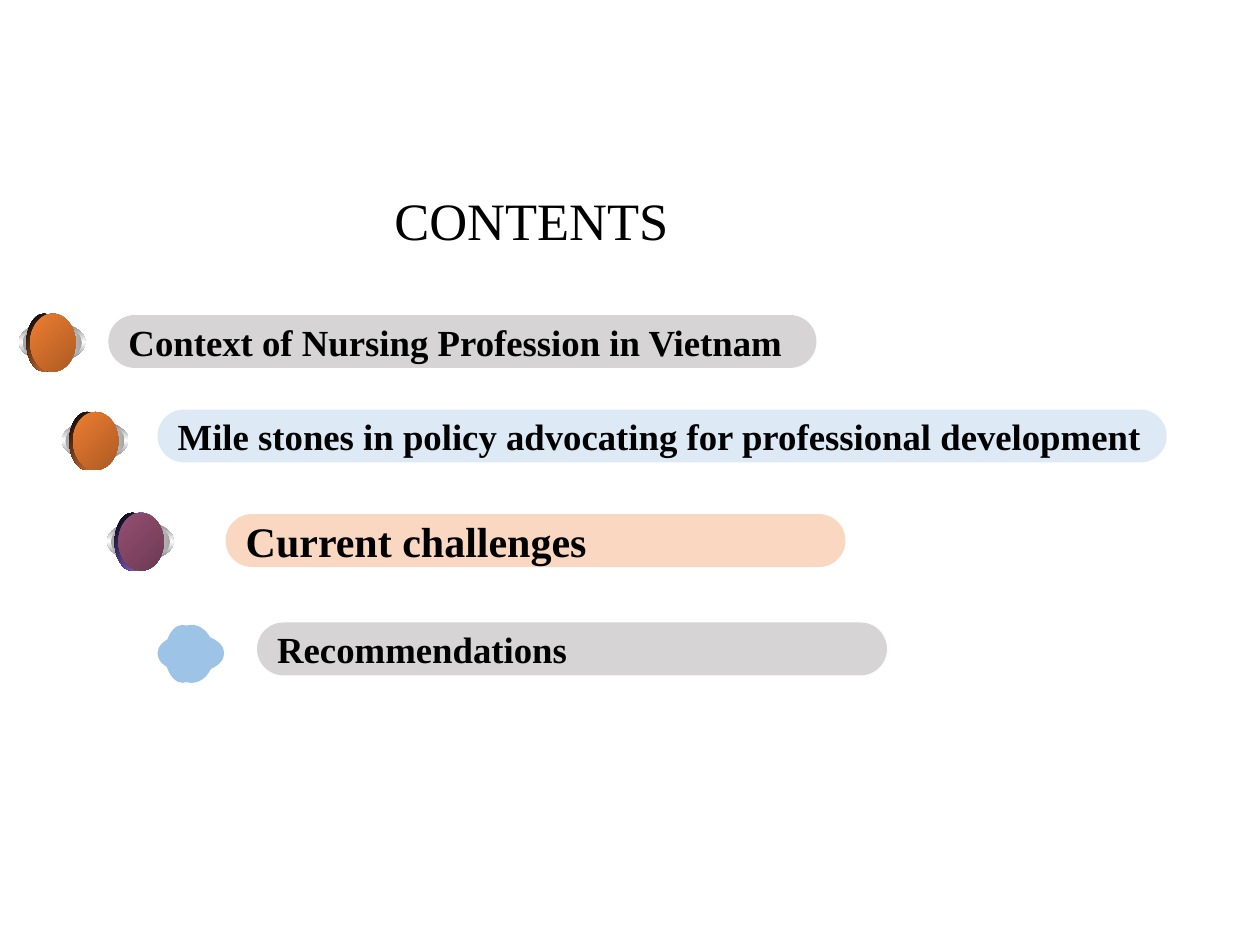
from dataclasses import dataclass

from lxml.etree import SubElement
from pptx import Presentation
from pptx.dml.color import RGBColor
from pptx.enum.shapes import MSO_SHAPE
from pptx.enum.text import MSO_ANCHOR, PP_ALIGN
from pptx.oxml.ns import qn
from pptx.util import Inches, Pt

FONT = "Times New Roman"
COLS, ROWS = 1000, 750
WIDTH, HEIGHT = Inches(10), Inches(7.5)


@dataclass(frozen=True)
class Box:
    col: int
    row: int
    cols: int
    rows: int

    def emu(self) -> tuple[int, ...]:
        cw, rh = WIDTH // COLS, HEIGHT // ROWS
        return self.col * cw, self.row * rh, self.cols * cw, self.rows * rh


@dataclass(frozen=True)
class Fill:
    colors: tuple[str, ...]
    angle: int = 0
    alpha: int = 100


@dataclass(frozen=True)
class Entry:
    text: str
    size: int
    pill: Box
    pill_color: str
    ball: tuple[int, int]
    edge: str = ""
    face: tuple[str, ...] = ()


BALL_COLOR = "9DC3E6"
OUTER_RING = Box(0, 7, 53, 31)
INNER_RING = Box(3, 9, 47, 28)
SIDE = Box(6, 0, 28, 46)
FACE = Box(9, 0, 36, 46)
ORANGE = ("ED7D31", "AD5B24")

ENTRIES = (
    Entry("Context of Nursing Profession in Vietnam", 21,
          Box(86, 250, 562, 42), "AFABAB", (15, 249), "ED7D31", ORANGE),
    Entry("Mile stones in policy advocating for professional development", 21,
          Box(125, 325, 801, 42), "BDD7EE", (49, 327), "ED7D31", ORANGE),
    Entry("Current challenges", 24,
          Box(179, 408, 492, 42), "F4B183", (85, 407), "8D67E1", ("954F72", "6D3A53")),
    Entry("Recommendations", 21,
          Box(204, 494, 500, 42), "AFABAB", (125, 496)),
)


def rgb(color: str) -> RGBColor:
    return RGBColor.from_string(color)


def paint(sp, fill: Fill) -> None:
    sp.shadow.inherit = False
    sp.line.fill.background()
    if len(fill.colors) == 1:
        sp.fill.solid()
        sp.fill.fore_color.rgb = rgb(fill.colors[0])
        if fill.alpha < 100:
            clr = sp.fill._xPr.find(qn("a:solidFill"))[0]
            SubElement(clr, qn("a:alpha"), val=str(fill.alpha * 1000))
        return
    sp.fill.gradient()
    grad = sp.fill._xPr.find(qn("a:gradFill"))
    for child in list(grad):
        grad.remove(child)
    stops = SubElement(grad, qn("a:gsLst"))
    for i, color in enumerate(fill.colors):
        pos = 100000 * i // (len(fill.colors) - 1)
        gs = SubElement(stops, qn("a:gs"), pos=str(pos))
        SubElement(gs, qn("a:srgbClr"), val=color)
    SubElement(grad, qn("a:lin"), ang=str(fill.angle * 60000), scaled="1")


def write(tf, text: str, size: int, bold: bool) -> None:
    p = tf.paragraphs[0]
    p.text = text
    p.alignment = PP_ALIGN.LEFT
    p.font.name, p.font.size, p.font.bold = FONT, Pt(size), bold
    p.font.color.rgb = rgb("000000")


def ball_layers(entry: Entry) -> list[tuple[Box, Fill]]:
    if not entry.face:
        return [(box, Fill((BALL_COLOR,))) for box in (OUTER_RING, INNER_RING, SIDE, FACE)]
    return [
        (OUTER_RING, Fill(("767676", "FFFFFF", "767676"), 90)),
        (INNER_RING, Fill(("A2A2A2", "FFFFFF", "A2A2A2"), 0)),
        (SIDE, Fill(("FFFFFF", "0563C1", "FFFFFF"), 45)),
        (SIDE, Fill(("000000", entry.edge), 45)),
        (FACE, Fill(("044C94", "0563C1", "044C94"), 315)),
        (FACE, Fill(entry.face, 45)),
    ]


def draw_ball(s, entry: Entry) -> None:
    col, row = entry.ball
    group = s.shapes.add_group_shape()
    for box, fill in ball_layers(entry):
        place = Box(col + box.col, row + box.row, box.cols, box.rows)
        paint(group.shapes.add_shape(MSO_SHAPE.OVAL, *place.emu()), fill)


def draw_pill(s, entry: Entry) -> None:
    sp = s.shapes.add_shape(MSO_SHAPE.ROUNDED_RECTANGLE, *entry.pill.emu())
    sp.adjustments[0] = 0.5
    paint(sp, Fill((entry.pill_color,), alpha=50))
    tf = sp.text_frame
    tf.word_wrap = False
    tf.vertical_anchor = MSO_ANCHOR.MIDDLE
    write(tf, entry.text, entry.size, True)


def draw_title(s, text: str) -> None:
    tf = s.shapes.add_textbox(*Box(66, 102, 862, 109).emu()).text_frame
    tf.word_wrap = True
    tf.vertical_anchor = MSO_ANCHOR.BOTTOM
    tf.margin_left, tf.margin_bottom = Inches(2.47), Inches(0.11)
    write(tf, text, 30, False)
    tf.paragraphs[0].line_spacing = 0.9


def main() -> None:
    prs = Presentation()
    prs.slide_width, prs.slide_height = WIDTH, HEIGHT
    s = prs.slides.add_slide(prs.slide_layouts[6])
    draw_title(s, "CONTENTS")
    for entry in ENTRIES:
        draw_ball(s, entry)
        draw_pill(s, entry)
    prs.save("out.pptx")


if __name__ == "__main__":
    main()
